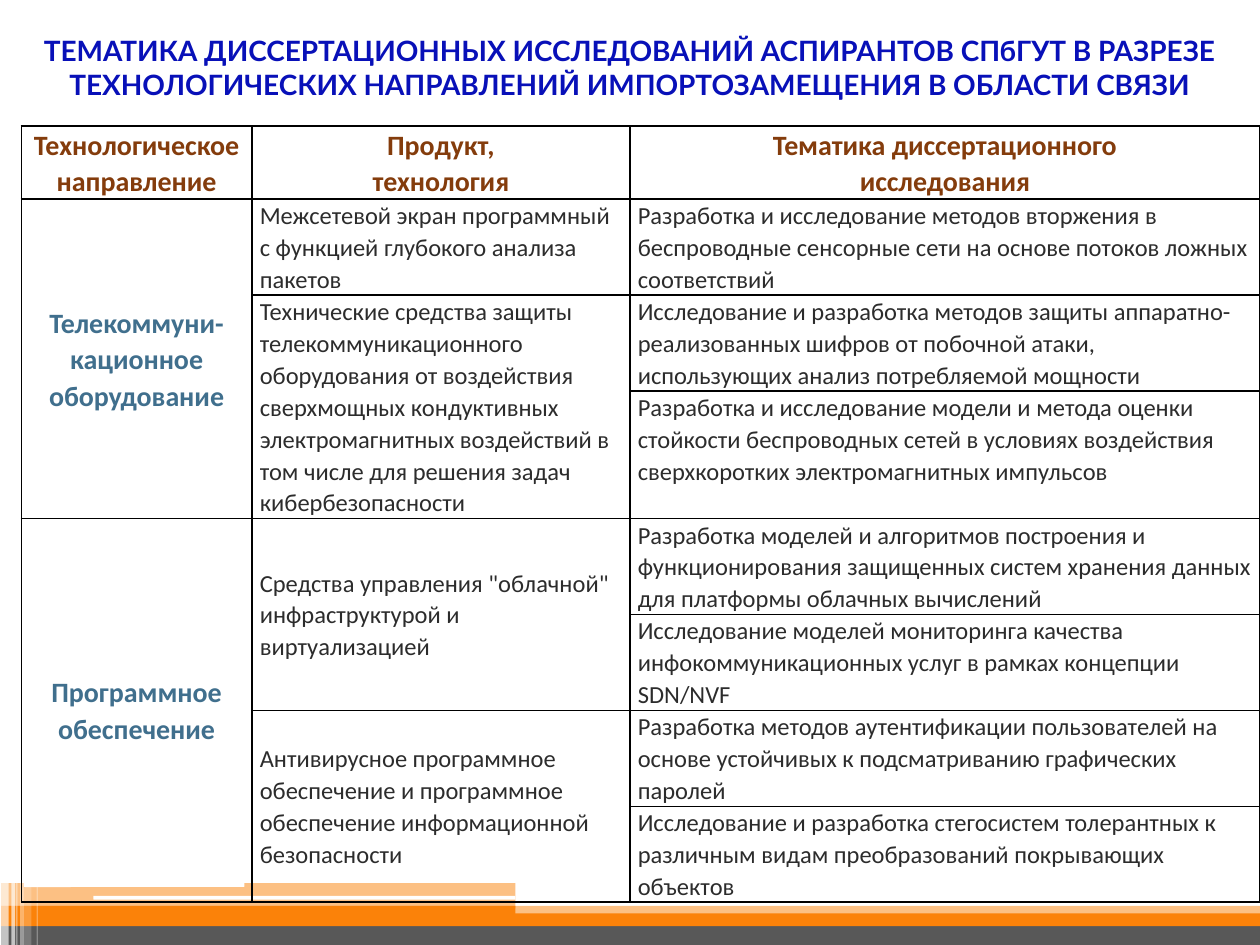
from lxml.etree import SubElement
from pptx import Presentation
from pptx.dml.color import RGBColor
from pptx.enum.shapes import MSO_SHAPE as Shape
from pptx.enum.text import MSO_ANCHOR as Anchor, PP_ALIGN as Align
from pptx.oxml.ns import qn
from pptx.util import Pt

ORANGE = RGBColor(0xFB, 0x82, 0x09)
GRAY = RGBColor(0x58, 0x58, 0x58)
WHITE = RGBColor(0xFF, 0xFF, 0xFF)
BLACK = RGBColor(0, 0, 0)
BLUE = RGBColor(0x08, 0x10, 0xB8)
BROWN = RGBColor(0x84, 0x3C, 0x0C)
STEEL = RGBColor(0x40, 0x6F, 0x8D)
DARK = RGBColor(0x2C, 0x2C, 0x2C)

BARS = [
    (0, 0, 720, 6.5, ORANGE, 50),
    (0, 8.6, 720, 13.7, GRAY, 100),
    (0, 4.3, 720, 7.2, ORANGE, 100),
    (0, 0, 293.8, 7.2, ORANGE, 100),
    (0, -13, 293.8, 14.4, ORANGE, 50),
]
HIGHLIGHTS = [(52.6, -5.8, 241.2, 2.2), (13, -13.7, 126, 2.9)]
STRIPES = [
    (0, 4.3, 49, 65), (5.8, 2.2, 49, 65), (8.6, 0.7, 49, 60),
    (10.8, 2.2, 49, 40), (13, 4.3, 46, 20), (20.2, 0.7, 46, 30),
]

COLUMN_WIDTHS = [131.8, 216, 360]
ROW_HEIGHTS = [41.8, 54.8, 54.8, 73] + [54.8] * 4
HEADERS = [
    "Технологическое направление",
    "Продукт,\nтехнология",
    "Тематика диссертационного\nисследования",
]
DIRECTIONS = [
    (1, 3, "Телекоммуни-\nкационное\nоборудование"),
    (4, 7, "Программное обеспечение"),
]
PRODUCTS = [
    (1, 1, "Межсетевой экран программный с функцией глубокого анализа пакетов"),
    (2, 3, "Технические средства защиты телекоммуникационного оборудования от "
           "воздействия сверхмощных кондуктивных электромагнитных воздействий в "
           "том числе для решения задач кибербезопасности"),
    (4, 5, "Средства управления \"облачной\"\nинфраструктурой и виртуализацией"),
    (6, 7, "Антивирусное программное обеспечение и программное обеспечение "
           "информационной безопасности"),
]
TOPICS = [
    "Разработка и исследование методов вторжения в беспроводные сенсорные сети "
    "на основе потоков ложных соответствий",
    "Исследование и разработка методов защиты аппаратно-реализованных шифров "
    "от побочной атаки, использующих анализ потребляемой мощности",
    "Разработка и исследование модели и метода оценки стойкости беспроводных "
    "сетей в условиях воздействия сверхкоротких электромагнитных импульсов",
    "Разработка моделей и алгоритмов построения и функционирования защищенных "
    "систем хранения данных для платформы облачных вычислений",
    "Исследование моделей мониторинга качества инфокоммуникационных услуг "
    "в рамках концепции SDN/NVF",
    "Разработка методов аутентификации пользователей на основе устойчивых "
    "к подсматриванию графических паролей",
    "Исследование и разработка стегосистем толерантных к различным видам "
    "преобразований покрывающих объектов",
]


def write_text(frame, text, *, size, color, font="Calibri", bold=False,
               align=Align.LEFT, spacing=None):
    frame.word_wrap = True
    frame.text = text
    for paragraph in frame.paragraphs:
        paragraph.alignment = align
        paragraph.line_spacing = spacing
        for run in paragraph.runs:
            run.font.name = font
            run.font.size = Pt(size)
            run.font.bold = bold
            run.font.color.rgb = color


def add_bar(slide, left, top, width, height, color, opacity=100, kind=Shape.RECTANGLE):
    shape = slide.shapes.add_shape(kind, Pt(left), Pt(top), Pt(width), Pt(height))
    shape.shadow.inherit = False
    shape.line.fill.background()
    shape.fill.solid()
    shape.fill.fore_color.rgb = color
    if opacity < 100:
        color_element = shape.fill._xPr.find(".//" + qn("a:srgbClr"))
        SubElement(color_element, qn("a:alpha"), val=str(opacity * 1000))


def add_footer(slide, left, top, bottom):
    for x, y, width, height, color, opacity in BARS:
        add_bar(slide, left + x, top + y, width, height, color, opacity)
    for x, y, width, height in HIGHLIGHTS:
        add_bar(slide, left + x, top + y, width, height, WHITE,
                kind=Shape.ROUNDED_RECTANGLE)
    for x, width, height, opacity in STRIPES:
        add_bar(slide, left + x, bottom - height, width, height, WHITE, opacity)


def add_title(slide, left, top, width, height):
    box = slide.shapes.add_textbox(Pt(left), Pt(top), Pt(width), Pt(height))
    box.text_frame.vertical_anchor = Anchor.MIDDLE
    write_text(box.text_frame,
               "ТЕМАТИКА ДИССЕРТАЦИОННЫХ ИССЛЕДОВАНИЙ АСПИРАНТОВ СПбГУТ В РАЗРЕЗЕ "
               "ТЕХНОЛОГИЧЕСКИХ НАПРАВЛЕНИЙ ИМПОРТОЗАМЕЩЕНИЯ В ОБЛАСТИ СВЯЗИ",
               size=16, color=BLUE, font="Lato", bold=True, align=Align.CENTER)


def format_cell(cell):
    cell.margin_left = cell.margin_right = Pt(4.5)
    cell.margin_top = cell.margin_bottom = 0
    properties = cell._tc.get_or_add_tcPr()
    for side in ("a:lnL", "a:lnR", "a:lnT", "a:lnB"):
        line = SubElement(properties, qn(side), w=str(Pt(1)))
        fill = SubElement(line, qn("a:solidFill"))
        SubElement(fill, qn("a:srgbClr"), val=str(BLACK))
    cell.fill.background()


def add_research_table(slide, left, top):
    frame = slide.shapes.add_table(
        len(ROW_HEIGHTS), len(COLUMN_WIDTHS), Pt(left), Pt(top),
        Pt(sum(COLUMN_WIDTHS)), Pt(sum(ROW_HEIGHTS)))
    table = frame.table
    table.first_row = table.horz_banding = False
    for column, width in zip(table.columns, COLUMN_WIDTHS):
        column.width = Pt(width)
    for row, height in zip(table.rows, ROW_HEIGHTS):
        row.height = Pt(height)
    for cell in table.iter_cells():
        format_cell(cell)

    heading = dict(size=16, bold=True, align=Align.CENTER)
    body = dict(size=14, color=DARK)
    entries = [(0, 0, column, text, Anchor.MIDDLE, dict(heading, color=BROWN))
               for column, text in enumerate(HEADERS)]
    entries += [(first, last, 0, text, Anchor.MIDDLE, dict(heading, color=STEEL))
                for first, last, text in DIRECTIONS]
    entries += [(first, last, 1, text, Anchor.MIDDLE, body)
                for first, last, text in PRODUCTS]
    entries += [(row, row, 2, text, Anchor.TOP, body)
                for row, text in enumerate(TOPICS, 1)]
    for first, last, column, text, anchor, style in entries:
        cell = table.cell(first, column)
        if last > first:
            cell.merge(table.cell(last, column))
        cell.vertical_anchor = anchor
        write_text(cell.text_frame, text, spacing=1.07, **style)


def main():
    presentation = Presentation()
    presentation.slide_width = Pt(720)
    presentation.slide_height = Pt(540)
    slide = presentation.slides.add_slide(presentation.slide_layouts[6])
    add_footer(slide, 0.7, 517.7, 540)
    add_title(slide, 0, 15.1, 720, 46.8)
    add_research_table(slide, 12.2, 72)
    presentation.save("out.pptx")


if __name__ == "__main__":
    main()
